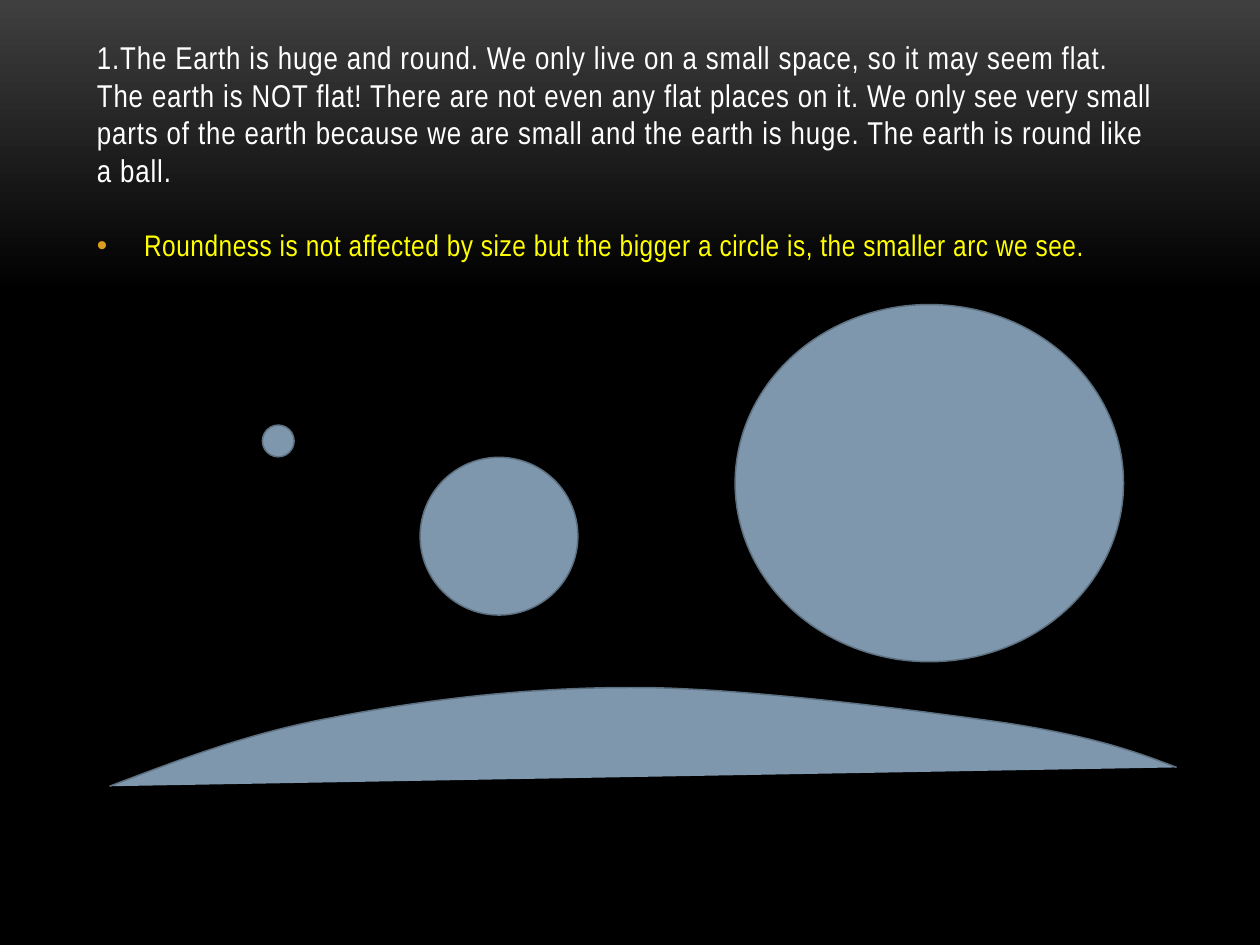
from lxml import etree
from pptx import Presentation
from pptx.dml.color import RGBColor
from pptx.enum.shapes import MSO_SHAPE
from pptx.enum.text import MSO_ANCHOR, MSO_AUTO_SIZE, PP_ALIGN
from pptx.oxml.ns import qn
from pptx.util import Cm, Pt

OVAL = MSO_SHAPE.OVAL
TOP, BOTTOM = MSO_ANCHOR.TOP, MSO_ANCHOR.BOTTOM
NO_FIT = MSO_AUTO_SIZE.NONE
LEFT = PP_ALIGN.LEFT

CHARCOAL = RGBColor(0x3F, 0x3F, 0x3F)
BLACK = RGBColor(0x00, 0x00, 0x00)
WHITE = RGBColor(0xFF, 0xFF, 0xFF)
YELLOW = RGBColor(0xFF, 0xFF, 0x00)
ORANGE = RGBColor(0xDC, 0x9E, 0x1F)
BLUE = RGBColor(0x7E, 0x97, 0xAD)
SLATE = RGBColor(0x5D, 0x70, 0x80)
FONT = "Arial Narrow"


def add_run(paragraph, text, size, color, spacing):
    run = paragraph.add_run()
    run.text = text
    run.font.name = FONT
    run.font.size = Pt(size)
    run.font.color.rgb = color
    run._r.get_or_add_rPr().set("spc", str(spacing))


def paint(shape):
    shape.shadow.inherit = False
    shape.fill.solid()
    shape.fill.fore_color.rgb = BLUE
    shape.line.color.rgb = SLATE
    shape.line.width = Pt(0.85)


prs = Presentation()
prs.slide_width = Cm(25.4)
prs.slide_height = Cm(19.05)
slide = prs.slides.add_slide(prs.slide_layouts[1])

backdrop = slide.background.fill
backdrop.gradient()
backdrop.gradient_angle = 270
for stop, (position, color) in zip(backdrop.gradient_stops, [(0, CHARCOAL), (0.31, BLACK)]):
    stop.position = position
    stop.color.rgb = color

heading = slide.shapes.title
fact = slide.placeholders[1]
for holder, top, height, anchor in [(heading, 0.76, 3.18, BOTTOM), (fact, 4.45, 11.43, TOP)]:
    holder.left, holder.top = Cm(1.7), Cm(top)
    holder.width, holder.height = Cm(22.02), Cm(height)
    holder.text_frame.word_wrap = True
    holder.text_frame.auto_size = NO_FIT
    holder.text_frame.vertical_anchor = anchor

statement = heading.text_frame.paragraphs[0]
statement.alignment = LEFT
add_run(statement, "1.The Earth is huge and round. We only live on a small space, so it may seem flat.", 18, WHITE, 50)
statement.add_line_break()
add_run(
    statement,
    "The earth is NOT flat! There are not even any flat places on it. We only see very small "
    "parts of the earth because we are small and the earth is huge. The earth is round like a ball.",
    18, WHITE, 50,
)

roundness = fact.text_frame.paragraphs[0]
bullet = roundness._p.get_or_add_pPr()
bullet.set("marL", str(Cm(0.95)))
bullet.set("indent", str(Cm(-0.95)))
bullet_color = etree.SubElement(bullet, qn("a:buClr"))
etree.SubElement(bullet_color, qn("a:srgbClr"), val=str(ORANGE))
etree.SubElement(bullet, qn("a:buFont"), typeface="Arial")
etree.SubElement(bullet, qn("a:buChar"), char="•")
roundness.alignment = LEFT
roundness.space_before = Pt(0)
roundness.space_after = Pt(6)
add_run(
    roundness,
    "Roundness is not affected by size but the bigger a circle is, the smaller arc we see.",
    17, YELLOW, 30,
)

circles = [(5.29, 8.57, 0.64, 0.64), (8.47, 9.22, 3.18, 3.18), (14.82, 6.14, 7.83, 7.2)]
for left, top, width, height in circles:
    paint(slide.shapes.add_shape(OVAL, Cm(left), Cm(top), Cm(width), Cm(height)))

horizon_start = (2.21, 15.85)
horizon_curves = [
    [(3.61, 15.32), (4.98, 14.78), (6.78, 14.45)],
    [(8.59, 14.1), (10.74, 13.84), (12.98, 13.86)],
    [(15.24, 13.89), (18.54, 14.33), (20.32, 14.58)],
    [(22.1, 14.86), (22.91, 15.16), (23.72, 15.47)],
]
STEPS = 24
arc_points = []
start = horizon_start
for control_1, control_2, end in horizon_curves:
    for step in range(1, STEPS + 1):
        t = step / STEPS
        weights = ((1 - t) ** 3, 3 * t * (1 - t) ** 2, 3 * t * t * (1 - t), t ** 3)
        corners = (start, control_1, control_2, end)
        x, y = (sum(w * c[axis] for w, c in zip(weights, corners)) for axis in (0, 1))
        arc_points.append((Cm(x), Cm(y)))
    start = end

horizon = slide.shapes.build_freeform(Cm(horizon_start[0]), Cm(horizon_start[1]))
horizon.add_line_segments(arc_points, close=False)
paint(horizon.convert_to_shape())

prs.save("out.pptx")
